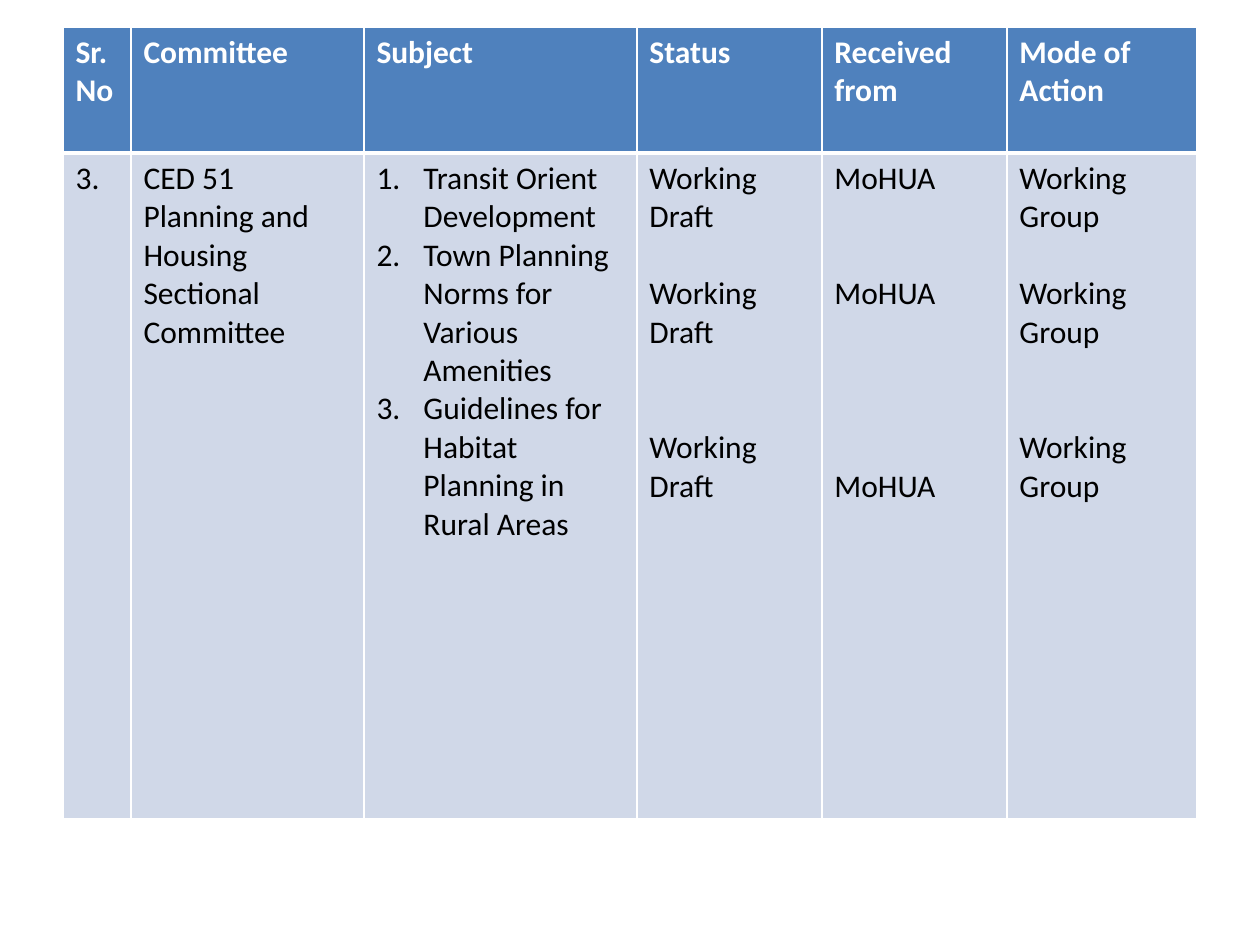
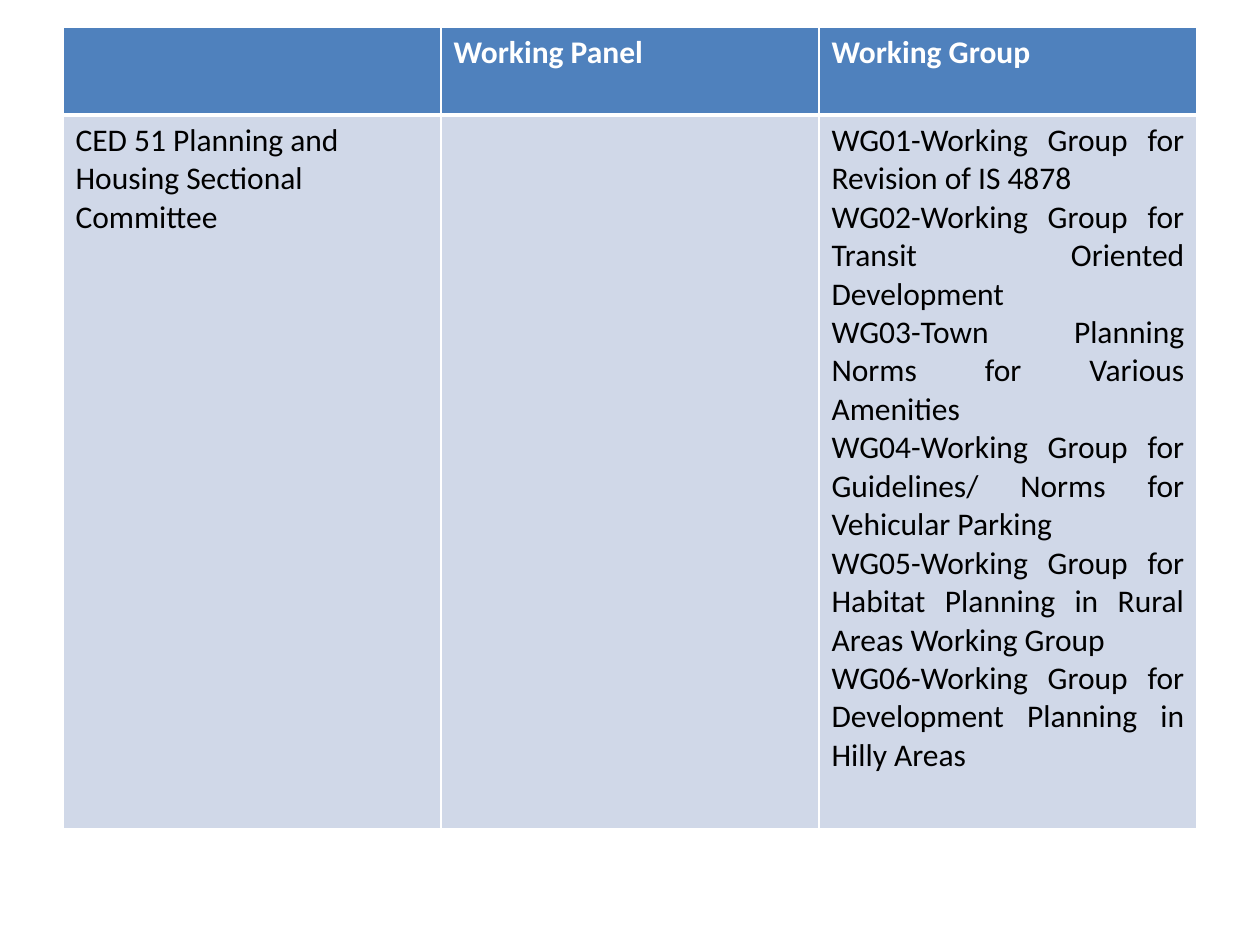
"""Build two slides with tables on the work of the planning and housing committee."""
from dataclasses import dataclass

from lxml.etree import SubElement
from pptx import Presentation
from pptx.dml.color import RGBColor
from pptx.enum.text import PP_ALIGN as Align
from pptx.oxml import parse_xml
from pptx.oxml.ns import nsdecls, qn
from pptx.util import Emu, Pt

WHITE = RGBColor(0xFF, 0xFF, 0xFF)
BLACK = RGBColor(0x00, 0x00, 0x00)
HEADER_BLUE = RGBColor(0x4F, 0x81, 0xBD)
BODY_BLUE = RGBColor(0xD0, 0xD8, 0xE8)

FONT = "Calibri"
FONT_SIZE = 18
LINE_HEIGHT = 22
PX_PER_INCH = 126
SLIDE_WIDTH, SLIDE_HEIGHT = 1260, 945
TABLE_LEFT, TABLE_TOP = 63, 27
NUMBER_INDENT = 47
THIN, THICK = 1, 3


@dataclass(frozen=True)
class Entry:
    """Text of one column's body cell, with blank lines left above each paragraph."""
    paragraphs: tuple[str, ...] = ()
    gaps: tuple[int, ...] = ()
    numbered: bool = False
    align: Align = Align.LEFT


@dataclass(frozen=True)
class Column:
    """One table column: heading, width in px and body entry."""
    heading: str
    width: int
    entry: Entry


@dataclass(frozen=True)
class CommitteeTable:
    """One slide's table with its row heights in px."""
    header_height: int
    body_height: int
    columns: tuple[Column, ...]


def px(length: int) -> Emu:
    """Turn px into EMU."""
    return Emu(round(length * 914400 / PX_PER_INCH))


def write(paragraph, text: str, *, color: RGBColor = BLACK, bold: bool = False,
          align: Align = Align.LEFT, blank_lines: int = 0, numbered: bool = False) -> None:
    """Write text into a paragraph with its format."""
    paragraph.text = text
    paragraph.alignment = align
    paragraph.space_before = Pt(blank_lines * LINE_HEIGHT)
    for run in paragraph.runs:
        run.font.name = FONT
        run.font.size = Pt(FONT_SIZE)
        run.font.bold = bold
        run.font.color.rgb = color
    if numbered:
        properties = paragraph._p.get_or_add_pPr()
        properties.set("marL", str(px(NUMBER_INDENT)))
        properties.set("indent", str(-px(NUMBER_INDENT)))
        SubElement(properties, qn("a:buFont"), typeface="+mj-lt")
        SubElement(properties, qn("a:buAutoNum"), type="arabicPeriod")


def style_cell(cell, fill: RGBColor, *, top: int = THIN, bottom: int = THIN) -> None:
    """Fill a cell and give it white borders, widths in points."""
    cell.fill.solid()
    cell.fill.fore_color.rgb = fill
    borders = {"lnL": THIN, "lnR": THIN, "lnT": top, "lnB": bottom}
    for position, (side, width) in enumerate(borders.items()):
        cell._tc.get_or_add_tcPr().insert(position, parse_xml(
            f'<a:{side} {nsdecls("a")} w="{Pt(width)}"><a:solidFill>'
            f'<a:srgbClr val="{WHITE}"/></a:solidFill></a:{side}>'))


def fill_entry(cell, entry: Entry) -> None:
    """Write the paragraphs of an entry into a body cell."""
    gaps = entry.gaps or (0,) * len(entry.paragraphs)
    for index, (text, gap) in enumerate(zip(entry.paragraphs, gaps)):
        paragraph = cell.text_frame.add_paragraph() if index else cell.text_frame.paragraphs[0]
        write(paragraph, text, align=entry.align, blank_lines=gap, numbered=entry.numbered)


def add_committee_slide(deck, content: CommitteeTable) -> None:
    """Add a slide that holds one committee table."""
    slide = deck.slides.add_slide(deck.slide_layouts[6])
    width = sum(column.width for column in content.columns)
    height = content.header_height + content.body_height
    table = slide.shapes.add_table(2, len(content.columns), px(TABLE_LEFT), px(TABLE_TOP),
                                   px(width), px(height)).table
    table.horz_banding = False
    table.rows[0].height = px(content.header_height)
    table.rows[1].height = px(content.body_height)
    for index, column in enumerate(content.columns):
        table.columns[index].width = px(column.width)
        heading, body = table.cell(0, index), table.cell(1, index)
        style_cell(heading, HEADER_BLUE, bottom=THICK)
        style_cell(body, BODY_BLUE, top=THICK)
        if column.heading:
            write(heading.text_frame.paragraphs[0], column.heading, color=WHITE, bold=True)
        fill_entry(body, column.entry)


SUBJECTS = CommitteeTable(126, 666, (
    Column("Sr. No", 68, Entry(("3.",))),
    Column("Committee", 233, Entry(("CED 51\vPlanning and Housing Sectional Committee",))),
    Column("Subject", 273, Entry((
        "Transit Orient Development",
        "Town Planning Norms for Various Amenities",
        "Guidelines for Habitat Planning in Rural Areas",
    ), numbered=True)),
    Column("Status", 185, Entry(("Working Draft",) * 3, gaps=(0, 1, 2))),
    Column("Received from", 185, Entry(("MoHUA",) * 3, gaps=(0, 2, 4))),
    Column("Mode of Action", 190, Entry(("Working Group",) * 3, gaps=(0, 1, 2))),
))

WORKING_GROUPS = CommitteeTable(88, 714, (
    Column("", 378, Entry(("CED 51 Planning and Housing Sectional Committee",))),
    Column("Working Panel", 378, Entry()),
    Column("Working Group", 378, Entry((
        "WG01-Working Group for Revision of IS 4878",
        "WG02-Working Group for Transit Oriented Development",
        "WG03-Town Planning Norms for Various Amenities",
        "WG04-Working Group for Guidelines/ Norms for Vehicular Parking",
        "WG05-Working Group for Habitat Planning in Rural Areas Working Group",
        "WG06-Working Group for Development Planning in Hilly Areas",
    ), align=Align.JUSTIFY)),
))


def main() -> None:
    """Build and save the deck."""
    deck = Presentation()
    deck.slide_width, deck.slide_height = px(SLIDE_WIDTH), px(SLIDE_HEIGHT)
    for content in (SUBJECTS, WORKING_GROUPS):
        add_committee_slide(deck, content)
    deck.save("out.pptx")


if __name__ == "__main__":
    main()
